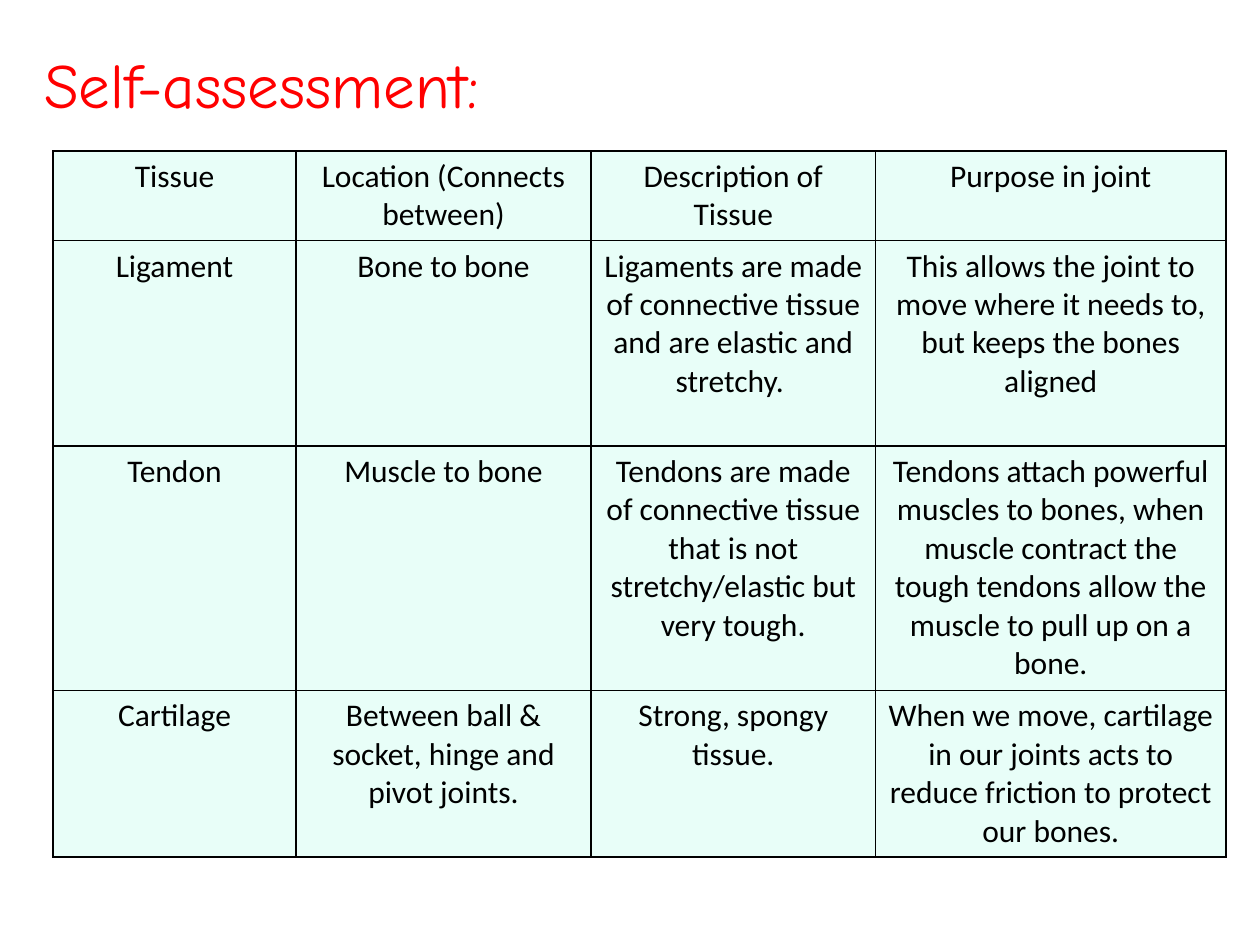
import pptx
import pptx.dml.color
import pptx.enum.text
import pptx.oxml.ns
import pptx.util
from lxml import etree

Inches = pptx.util.Inches
Pt = pptx.util.Pt
RGBColor = pptx.dml.color.RGBColor
Align = pptx.enum.text.PP_ALIGN
Anchor = pptx.enum.text.MSO_ANCHOR
qn = pptx.oxml.ns.qn

RED = RGBColor(0xFF, 0x00, 0x00)
BLACK = RGBColor(0x00, 0x00, 0x00)
MINT = RGBColor(0xE8, 0xFE, 0xF8)

COLS = [1.93, 2.34, 2.26, 2.78]
ROWS = [0.71, 1.63, 1.94, 1.32]
CELLS = [
    ["Tissue", "Location (Connects between)", "Description of Tissue",
     "Purpose in joint"],
    ["Ligament", "Bone to bone",
     "Ligaments are made of connective tissue and are elastic and stretchy. ",
     "This allows the joint to move where it needs to, but keeps the bones "
     "aligned"],
    ["Tendon", "Muscle to bone",
     "Tendons are made of connective tissue that is not stretchy/elastic but "
     "very tough.",
     "Tendons attach powerful muscles to bones, when muscle contract the "
     "tough tendons allow the muscle to pull up on a bone."],
    ["Cartilage", "Between ball & socket, hinge and pivot joints.",
     "Strong, spongy tissue.",
     "When we move, cartilage in our joints acts to reduce friction to "
     "protect our bones."],
]


def write(frame, text, font="Calibri", size=18, color=BLACK,
          align=Align.CENTER):
    para = frame.paragraphs[0]
    para.alignment = align
    run = para.add_run()
    run.text = text
    run.font.name = font
    run.font.size = Pt(size)
    run.font.color.rgb = color


class Page:
    """Holds the style and the current slide."""

    def __init__(self, deck, fill=MINT, line=BLACK, width=1):
        self.slide = deck.slides.add_slide(deck.slide_layouts[5])
        self.fill, self.line, self.width = fill, line, width

    def title(self, text, left, top, width, height, **style):
        box = self.slide.shapes.title
        box.left, box.top = Inches(left), Inches(top)
        box.width, box.height = Inches(width), Inches(height)
        frame = box.text_frame
        frame.word_wrap = False
        frame.auto_size = pptx.enum.text.MSO_AUTO_SIZE.NONE
        frame.vertical_anchor = Anchor.TOP
        write(frame, text, **style)

    def border(self, cell):
        props = cell._tc.get_or_add_tcPr()
        for side in ("lnL", "lnR", "lnT", "lnB"):
            edge = etree.SubElement(props, qn("a:" + side),
                                    w=str(Pt(self.width)))
            solid = etree.SubElement(edge, qn("a:solidFill"))
            etree.SubElement(solid, qn("a:srgbClr"), val=str(self.line))

    def table(self, cells, left, top, cols, rows):
        grid = self.slide.shapes.add_table(
            len(rows), len(cols), Inches(left), Inches(top),
            Inches(sum(cols)), Inches(sum(rows))).table
        for col, width in zip(grid.columns, cols):
            col.width = Inches(width)
        for row, height, texts in zip(grid.rows, rows, cells):
            row.height = Inches(height)
            for cell, text in zip(row.cells, texts):
                self.border(cell)
                cell.fill.solid()
                cell.fill.fore_color.rgb = self.fill
                write(cell.text_frame, text)
        # Every row looks alike, so the banded style is off
        grid.first_row = grid.horz_banding = False


def main():
    deck = pptx.Presentation()
    deck.slide_width, deck.slide_height = Inches(10), Inches(7.5)
    page = Page(deck)

    # Heading
    page.title("Self-assessment:", 0.25, 0.31, 4.35, 0.71,
               font="Comic Neue", size=36, color=RED, align=Align.LEFT)

    # Tissue table
    page.table(CELLS, 0.42, 1.2, COLS, ROWS)

    deck.save("out.pptx")


if __name__ == "__main__":
    main()
